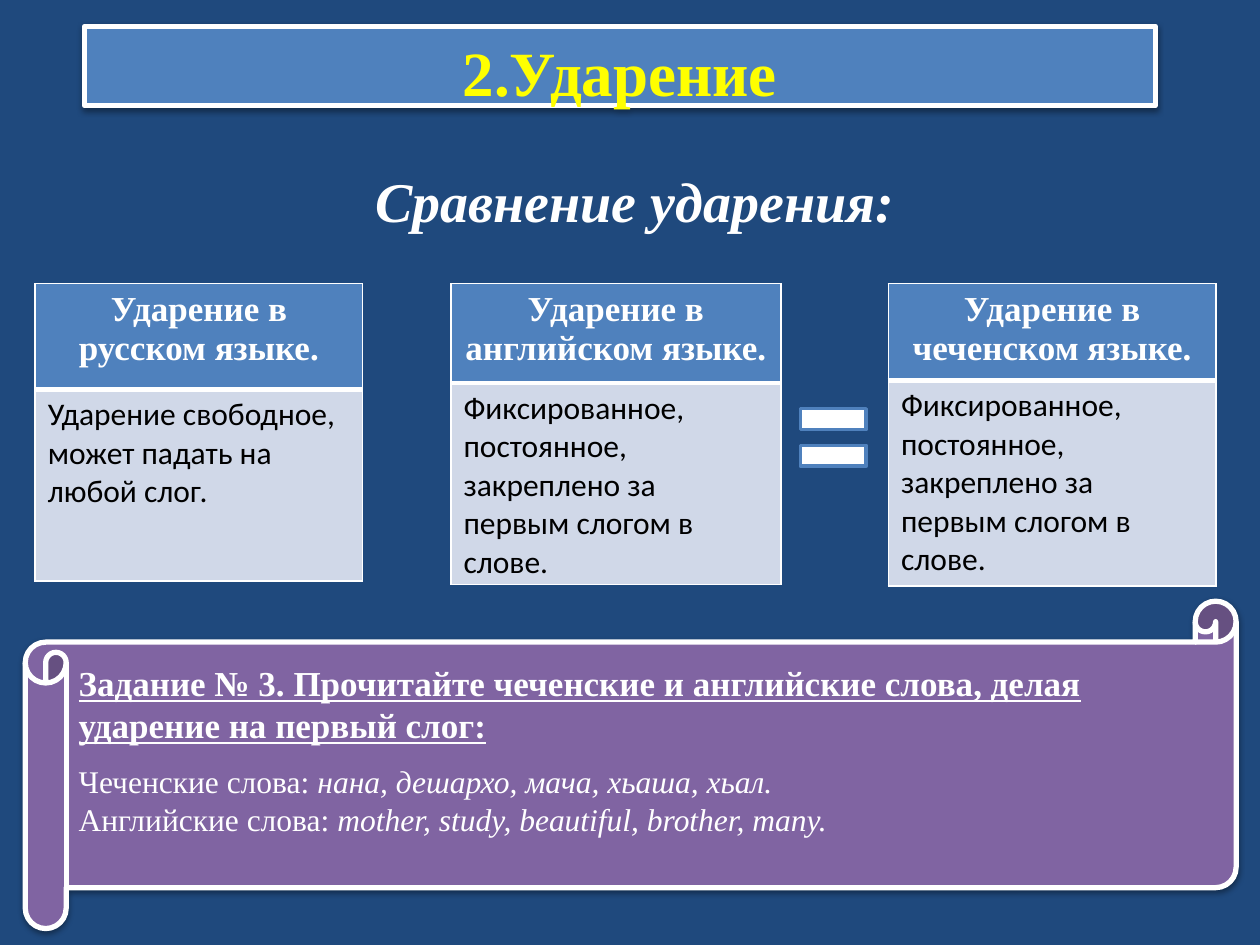
from lxml import etree
from pptx import Presentation
from pptx.dml.color import RGBColor
from pptx.enum.shapes import MSO_SHAPE
from pptx.enum.text import MSO_ANCHOR, MSO_AUTO_SIZE, PP_ALIGN
from pptx.oxml.ns import qn
from pptx.util import Cm, Pt

CENTER, LEFT = PP_ALIGN.CENTER, PP_ALIGN.LEFT
MIDDLE, TOP = MSO_ANCHOR.MIDDLE, MSO_ANCHOR.TOP
EQUAL, SCROLL = MSO_SHAPE.MATH_EQUAL, MSO_SHAPE.HORIZONTAL_SCROLL
SERIF, SANS = "Times New Roman", "Calibri"
HUES = {"navy": "1F497D", "blue": "4F81BD", "pale": "D0D8E8", "plum": "8064A2",
        "white": "FFFFFF", "gold": "FFFF00", "black": "000000"}

# Content
TITLE = "2.Ударение"
LEAD = "Сравнение ударения:"
FIXED = "Фиксированное, постоянное, закреплено за первым слогом в слове."
CARDS = [  # head, body, left, width, row heights
    ("Ударение в русском языке.", "Ударение свободное, может падать на любой слог.",
     0.71, 6.6, (2.13, 3.86)),
    ("Ударение в английском языке.", FIXED, 9.09, 6.65, (2.0, 2.9)),
    ("Ударение в чеченском языке.", FIXED, 17.91, 6.6, (1.85, 4.14)),
]
CARD_TOP = 5.72
TASK = ("Задание № 3. Прочитайте чеченские и английские слова, "
        "делая ударение на первый слог:")
WORDS = [
    ("Чеченские слова: ", "нана, дешархо, мача, хьаша, хьал."),
    ("Английские слова: ", "mother, study, beautiful, brother, many."),
]


def rgb(hue):
    return RGBColor.from_string(HUES[hue])


def style(para, size, hue, name=SERIF, bold=False, italic=None, align=LEFT):
    para.alignment = align
    font = para.font
    font.size, font.name, font.bold = Pt(size), name, bold
    font.color.rgb = rgb(hue)
    if italic is not None:
        font.italic = italic


def paint(shape, fill, line, width):
    shape.fill.solid()
    shape.fill.fore_color.rgb = rgb(fill)
    shape.line.color.rgb = rgb(line)
    shape.line.width = Pt(width)
    shape.shadow.inherit = False


def shade(shape):
    """Add a soft shadow that falls straight down."""
    effects = shape._element.spPr.find(qn("a:effectLst"))
    cast = etree.SubElement(effects, qn("a:outerShdw"), blurRad=str(Pt(3.1)),
                            dist=str(Pt(1.6)), dir="5400000", rotWithShape="0")
    tint = etree.SubElement(cast, qn("a:srgbClr"), val=HUES["black"])
    etree.SubElement(tint, qn("a:alpha"), val="38000")


def edge(cell, widths):
    """Draw white borders; widths run left, right, top, bottom."""
    props = cell._tc.get_or_add_tcPr()
    for i, (side, width) in enumerate(zip("LRTB", widths)):
        line = etree.Element(qn(f"a:ln{side}"), w=str(Pt(width)))
        fill = etree.SubElement(line, qn("a:solidFill"))
        etree.SubElement(fill, qn("a:srgbClr"), val=HUES["white"])
        props.insert(i, line)


def add_card(slide, head, body, left, width, rows):
    frame = slide.shapes.add_table(2, 1, Cm(left), Cm(CARD_TOP), Cm(width), Cm(sum(rows)))
    table = frame.table
    looks = [
        (head, "blue", (1, 1, 1, 3), dict(size=20, hue="white", bold=True, align=CENTER)),
        (body, "pale", (1, 1, 3, 1), dict(size=18, hue="black", name=SANS)),
    ]
    for i, (text, fill, widths, look) in enumerate(looks):
        table.rows[i].height = Cm(rows[i])
        cell = table.cell(i, 0)
        cell.text = text
        style(cell.text_frame.paragraphs[0], **look)
        cell.fill.solid()
        cell.fill.fore_color.rgb = rgb(fill)
        edge(cell, widths)


def main():
    deck = Presentation()
    deck.slide_width, deck.slide_height = Cm(25.4), Cm(19.05)
    slide = deck.slides.add_slide(deck.slide_layouts[5])
    slide.background.fill.solid()
    slide.background.fill.fore_color.rgb = rgb("navy")

    # Title bar
    title = slide.shapes.title
    title.left, title.top, title.width, title.height = Cm(1.7), Cm(0.53), Cm(21.59), Cm(1.6)
    paint(title, "blue", "white", 3)
    shade(title)
    frame = title.text_frame
    frame.text = TITLE
    frame.auto_size = MSO_AUTO_SIZE.NONE
    frame.vertical_anchor = MIDDLE
    frame.margin_top = Cm(0.33)
    style(frame.paragraphs[0], 36, "gold", bold=True, align=CENTER)

    # Lead line
    box = slide.shapes.add_textbox(Cm(3.91), Cm(3.24), Cm(17.78), Cm(4.76))
    box.text_frame.word_wrap = True
    box.text_frame.text = LEAD
    style(box.text_frame.paragraphs[0], 32, "white", bold=True, italic=True, align=CENTER)

    # Comparison tables
    for card in CARDS:
        add_card(slide, *card)

    # Equals sign between the two matching languages
    sign = slide.shapes.add_shape(EQUAL, Cm(15.9), Cm(7.92), Cm(1.8), Cm(1.8))
    sign.adjustments[0], sign.adjustments[1] = 0.235, 0.175
    paint(sign, "white", "blue", 2)

    # Task scroll
    scroll = slide.shapes.add_shape(SCROLL, Cm(0.51), Cm(12.12), Cm(24.41), Cm(6.6))
    paint(scroll, "plum", "white", 3)
    shade(scroll)
    frame = scroll.text_frame
    frame.word_wrap = True
    frame.vertical_anchor = TOP
    frame.margin_top = Cm(0.4)
    frame.text = TASK
    task = frame.paragraphs[0]
    style(task, 20, "white", bold=True)
    task.font.underline = True
    task.space_after = Pt(9)
    for label, words in WORDS:
        para = frame.add_paragraph()
        style(para, 18, "white")
        para.add_run().text = label
        run = para.add_run()
        run.text = words
        run.font.italic = True

    deck.save("out.pptx")


if __name__ == "__main__":
    main()
